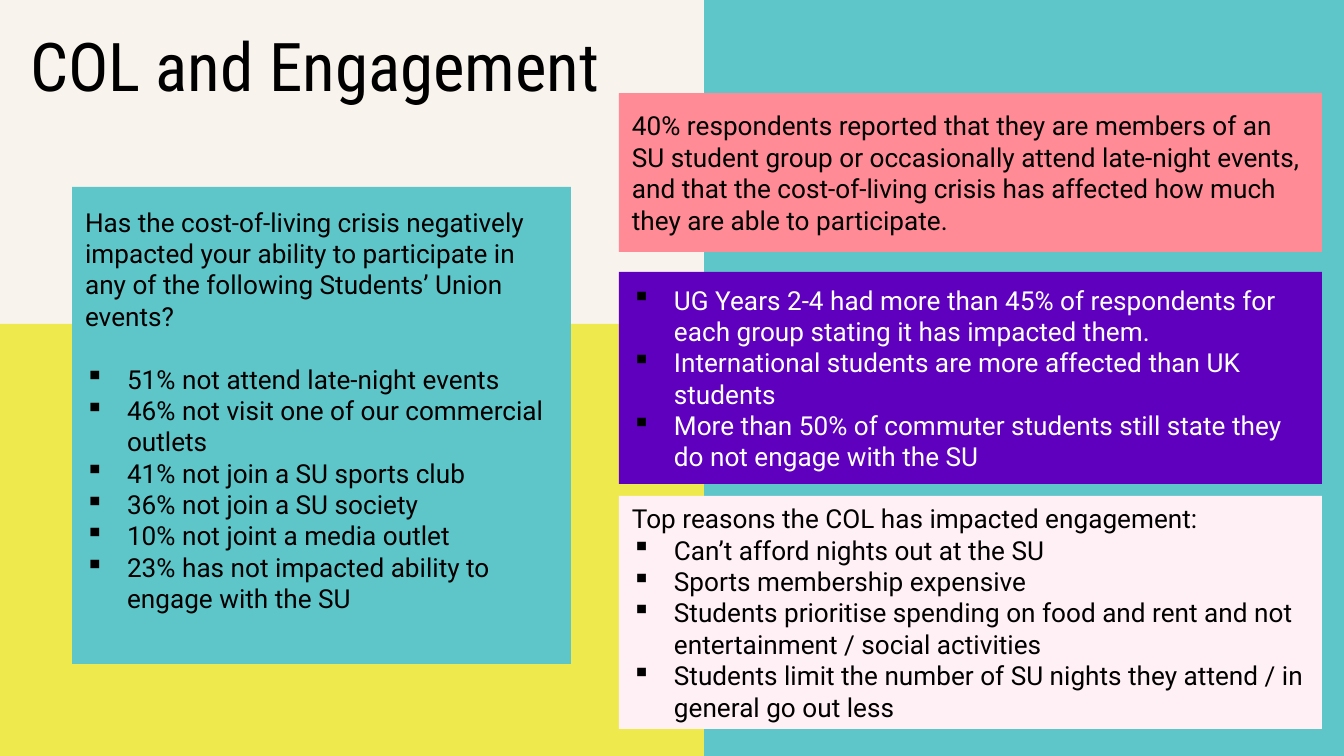
from dataclasses import dataclass

from lxml import etree
from pptx import Presentation
from pptx import util as u
from pptx.dml.color import RGBColor
from pptx.enum import shapes, text
from pptx.oxml.ns import qn

PX = 914400 / 134.4


def px(n):
    """Turn whole pixels into EMU."""
    return u.Emu(round(n * PX))


@dataclass(frozen=True)
class Theme:
    """Colours, fonts and type sizes."""
    cream: str = "F8F3EC"
    teal: str = "5EC6C9"
    yellow: str = "EEEA4D"
    coral: str = "FF8B96"
    purple: str = "5E00BD"
    blush: str = "FFF0F5"
    black: str = "000000"
    white: str = "FFFFFF"
    heading_font: str = "Roboto Condensed"
    body_font: str = "Roboto"
    heading_size: float = 36
    body_size: float = 14
    line_height: float = 16.8


class Deck:
    """Holds the theme and the current slide."""

    def __init__(self, prs, theme):
        """Add a title-only slide with a plain background."""
        self.theme = theme
        self.s = prs.slides.add_slide(prs.slide_layouts[5])
        fill = self.s.background.fill
        fill.solid()
        fill.fore_color.rgb = RGBColor.from_string(theme.cream)

    def run(self, p, words, font, size, color):
        """Add one styled run."""
        r = p.add_run()
        r.text = words
        r.font.name = font
        r.font.size = u.Pt(size)
        r.font.color.rgb = RGBColor.from_string(color)

    def frame(self, sp, side, top, bottom, anchor):
        """Set up a wrapping text frame."""
        tf = sp.text_frame
        tf.word_wrap = True
        tf.auto_size = text.MSO_AUTO_SIZE.NONE
        tf.vertical_anchor = anchor
        tf.margin_left = tf.margin_right = px(side)
        tf.margin_top, tf.margin_bottom = px(top), px(bottom)
        return tf

    def title(self, x, y, w, h, words):
        """Place and fill the title."""
        sp = self.s.shapes.title
        sp.left, sp.top, sp.width, sp.height = map(px, (x, y, w, h))
        p = self.frame(sp, 10, 5, 5, text.MSO_ANCHOR.TOP).paragraphs[0]
        p.alignment = text.PP_ALIGN.LEFT
        p.line_spacing = 0.8
        t = self.theme
        self.run(p, words, t.heading_font, t.heading_size, t.black)

    def block(self, x, y, w, h, color):
        """Draw a plain filled rectangle."""
        sp = self.s.shapes.add_shape(shapes.MSO_SHAPE.RECTANGLE, *map(px, (x, y, w, h)))
        sp.shadow.inherit = False
        sp.fill.solid()
        sp.fill.fore_color.rgb = RGBColor.from_string(color)
        sp.line.fill.background()
        return sp

    def bullet(self, p):
        """Give a paragraph a square bullet and hanging indent."""
        pPr = p._p.get_or_add_pPr()
        pPr.set("marL", str(px(42)))
        pPr.set("indent", str(-px(42)))
        clr = etree.SubElement(pPr, qn("a:buClr"))
        etree.SubElement(clr, qn("a:srgbClr")).set("val", self.theme.black)
        etree.SubElement(pPr, qn("a:buChar")).set("char", "▪")

    def panel(self, x, y, w, h, fill, lead="", items=(), color=None, bottom=7, gap=0):
        """Draw a panel with an optional lead paragraph and bullets."""
        t = self.theme
        sp = self.block(x, y, w, h, fill)
        tf = self.frame(sp, 13, 7, bottom, text.MSO_ANCHOR.MIDDLE)
        lines = ([(lead, False)] if lead else []) + [(item, True) for item in items]
        for i, (words, bulleted) in enumerate(lines):
            p = tf.add_paragraph() if i else tf.paragraphs[0]
            if bulleted:
                self.bullet(p)
            if i == 1 and gap:
                p.space_before = u.Pt(gap)
            p.alignment = text.PP_ALIGN.LEFT
            self.run(p, words, t.body_font, t.body_size, color or t.black)


def main():
    """Build the slide and save it."""
    prs = Presentation()
    prs.slide_width, prs.slide_height = px(1344), px(756)
    t = Theme()
    d = Deck(prs, t)
    d.block(704, 0, 640, 756, t.teal)
    d.block(0, 324, 704, 432, t.yellow)
    d.title(20, 35, 620, 75, "COL and Engagement")
    d.panel(
        72, 187, 499, 477, t.teal,
        "Has the cost-of-living crisis negatively impacted your ability to participate in "
        "any of the following Students’ Union events?",
        ["51% not attend late-night events",
         "46% not visit one of our commercial outlets",
         "41% not join a SU sports club",
         "36% not join a SU society",
         "10% not joint a media outlet",
         "23% has not impacted ability to engage with the SU"],
        bottom=38, gap=t.line_height)
    right, width = 619, 703
    d.panel(
        right, 93, width, 159, t.coral,
        "40% respondents reported that they are members of an SU student group or "
        "occasionally attend late-night events, and that the cost-of-living crisis has "
        "affected how much they are able to participate.")
    d.panel(
        right, 272, width, 212, t.purple, color=t.white,
        items=["UG Years 2-4 had more than 45% of respondents for each group stating it has "
               "impacted them.",
               "International students are more affected than UK students",
               "More than 50% of commuter students still state they do not engage with the SU"])
    d.panel(
        right, 496, width, 233, t.blush,
        "Top reasons the COL has impacted engagement:",
        ["Can’t afford nights out at the SU",
         "Sports membership expensive",
         "Students prioritise spending on food and rent and not entertainment / social "
         "activities",
         "Students limit the number of SU nights they attend / in general go out less"])
    prs.save("out.pptx")


if __name__ == "__main__":
    main()
